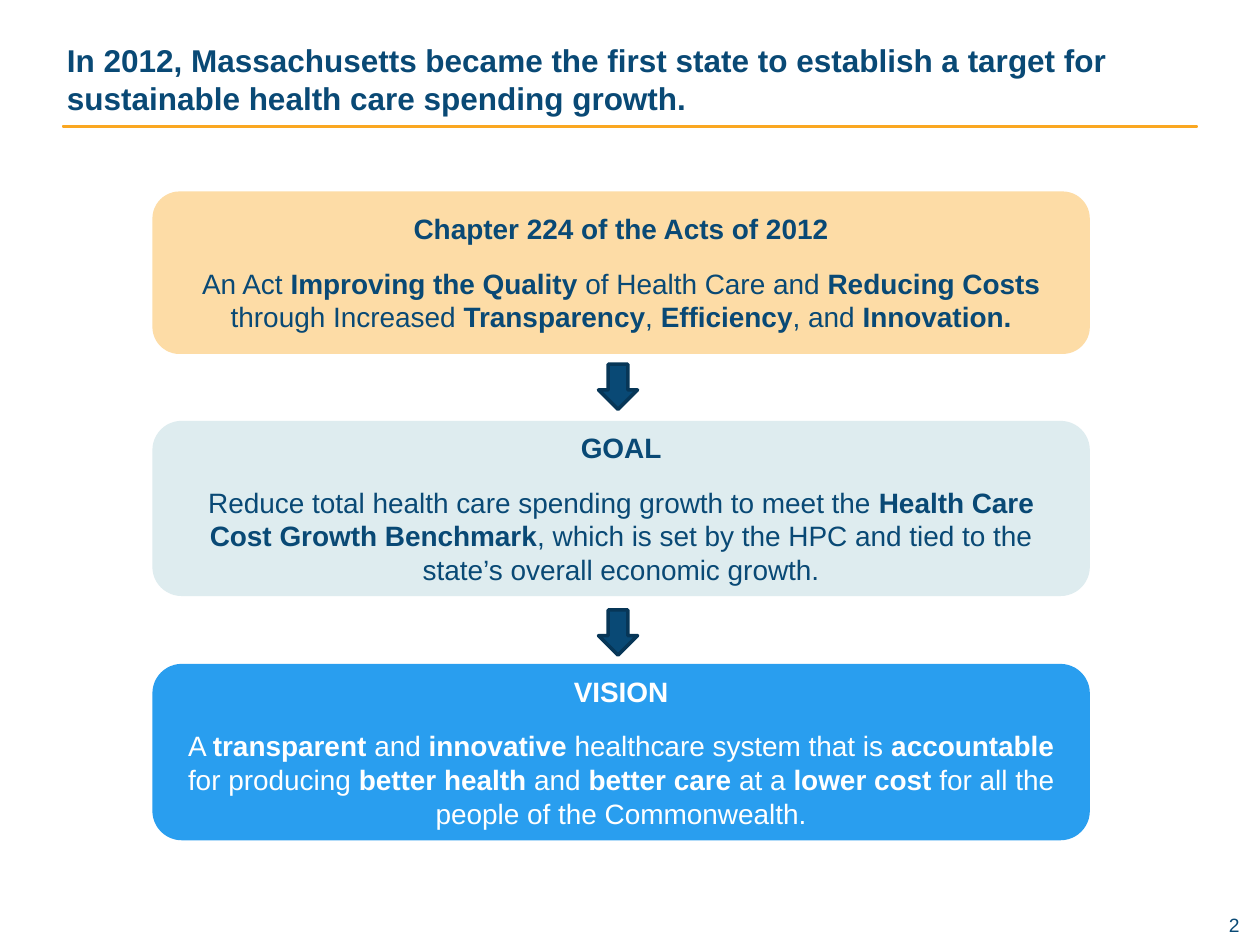
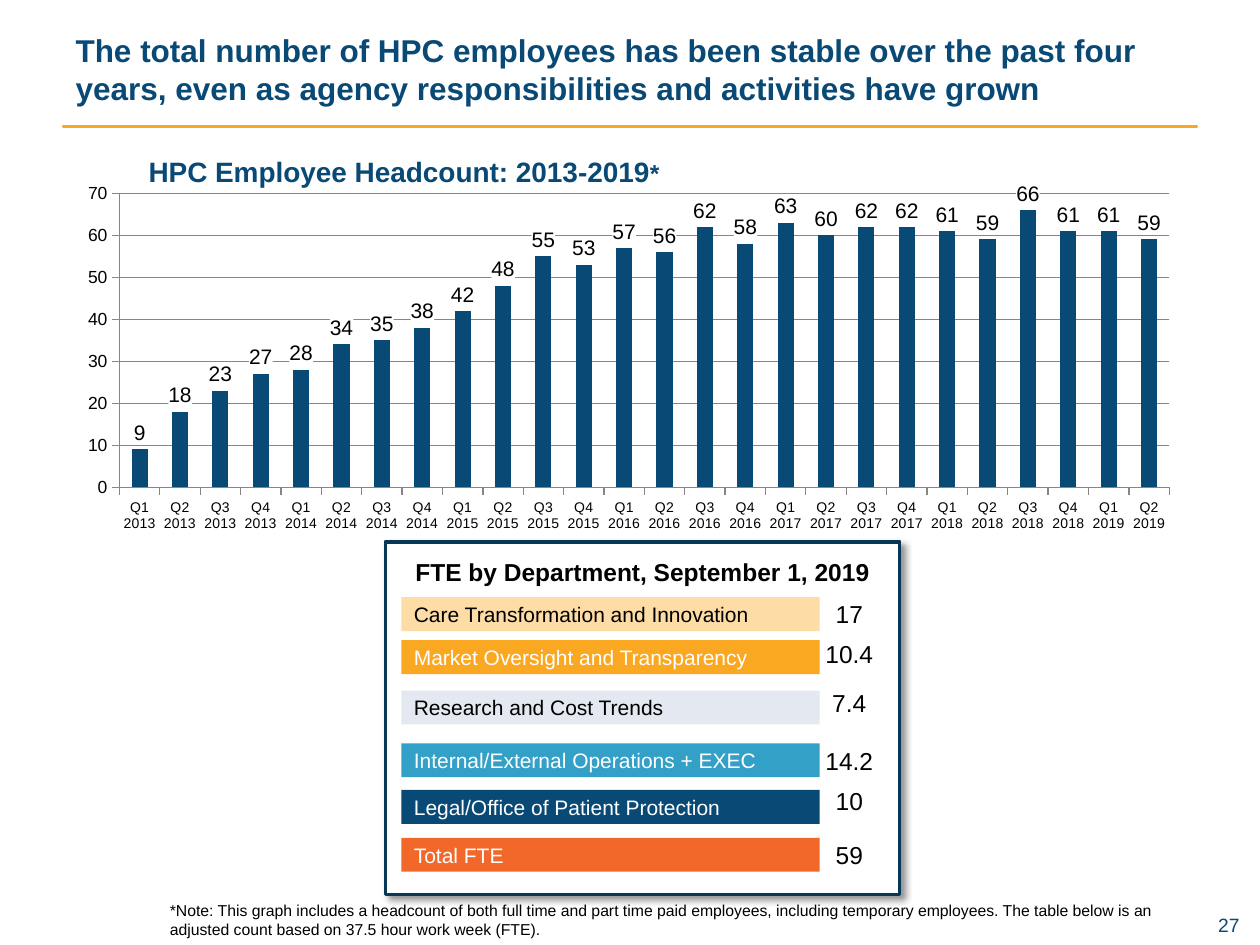
from itertools import islice, product
from typing import NamedTuple

from pptx import Presentation
from pptx import util as u
from pptx.chart import data as cd
from pptx.dml import color
from pptx.enum import chart as ch
from pptx.enum import shapes, text
from pptx.oxml import ns, parse_xml

Pt = u.Pt
FONT = "Arial"
C = {
    "navy": "094975",
    "edge": "073657",
    "amber": "FAA721",
    "sand": "FDDCA6",
    "mist": "DEECEF",
    "sky": "299EEF",
    "teal": "33A0C8",
    "haze": "E3E8F1",
    "orange": "F2682A",
    "grid": "868686",
    "white": "FFFFFF",
    "black": "000000",
}
SHAPE = shapes.MSO_SHAPE
LEFT, CENTER, RIGHT = text.PP_ALIGN.LEFT, text.PP_ALIGN.CENTER, text.PP_ALIGN.RIGHT
MIDDLE, TOP = text.MSO_ANCHOR.MIDDLE, text.MSO_ANCHOR.TOP


class Box(NamedTuple):
    x: float
    y: float
    w: float
    h: float


class Step(NamedTuple):
    y: float
    h: float
    fill: str
    ink: str
    heading: str
    body: str


class Department(NamedTuple):
    y: float
    value_y: float
    fill: str
    ink: str
    name: str
    fte: str


STEPS = [
    Step(109.4, 92.9, "sand", "navy", "Chapter 224 of the Acts of 2012",
         "An Act **Improving the Quality **of Health Care and **Reducing Costs **through "
         "Increased **Transparency**, **Efficiency**, and **Innovation.**"),
    Step(240.5, 100.1, "mist", "navy", "GOAL",
         "Reduce total health care spending growth to meet the **Health Care Cost Growth "
         "Benchmark**, which is set by the HPC and tied to the state’s overall economic growth."),
    Step(379.4, 100.8, "sky", "white", "VISION",
         "A **transparent** and **innovative** healthcare system that is **accountable **for "
         "producing **better health **and **better care **at a **lower cost **for all the "
         "people of the Commonwealth."),
]
ARROW_TOPS = [208.1, 348.5]

DEPARTMENTS = [
    Department(341.3, 341.3, "sand", "black", "Care Transformation and Innovation", "17"),
    Department(365.8, 363.6, "amber", "white", "Market Oversight and Transparency", "10.4"),
    Department(394.6, 391.7, "haze", "black", "Research and Cost Trends", "7.4"),
    Department(424.8, 424.8, "teal", "white", "Internal/External Operations + EXEC", "14.2"),
    Department(451.4, 447.8, "navy", "white", "Legal/Office of Patient Protection", "10"),
    Department(478.8, 478.8, "orange", "white", "Total FTE", "59"),
]
HEADCOUNT = [9, 18, 23, 27, 28, 34, 35, 38, 42, 48, 55, 53, 57,
             56, 62, 58, 63, 60, 62, 62, 61, 59, 66, 61, 61, 59]


def rgb(name: str) -> color.RGBColor:
    return color.RGBColor.from_string(C[name])


def style(font, size: float, ink: str, bold: bool = False) -> None:
    font.name, font.size, font.bold = FONT, Pt(size), bold
    font.color.rgb = rgb(ink)


def place(sp, box: Box) -> None:
    sp.left, sp.top, sp.width, sp.height = map(Pt, box)


def add_shape(s, kind, box: Box, fill: str, line: str = "", weight: float = 1):
    sp = s.shapes.add_shape(kind, *map(Pt, box))
    sp.shadow.inherit = False
    sp.fill.solid()
    sp.fill.fore_color.rgb = rgb(fill)
    if line:
        sp.line.color.rgb = rgb(line)
        sp.line.width = Pt(weight)
    else:
        sp.line.fill.background()
    return sp


def write(sp, content: str, size: float, ink: str, bold: bool = False,
          align=LEFT, anchor=MIDDLE):
    tf = sp.text_frame
    tf.word_wrap = True
    tf.vertical_anchor = anchor
    tf.text = content
    p = tf.paragraphs[0]
    p.alignment = align
    style(p.runs[0].font, size, ink, bold)
    return tf


def add_text(s, box: Box, content: str, size: float, ink: str, bold: bool = False,
             align=LEFT, anchor=TOP):
    return write(s.shapes.add_textbox(*map(Pt, box)), content, size, ink, bold, align, anchor)


def add_slide(prs, title: str, x: float, y: float, number: int):
    s = prs.slides.add_slide(prs.slide_layouts[5])
    add_shape(s, SHAPE.RECTANGLE, Box(36, 72, 648, 0.72), "amber", "amber")
    tf = add_text(s, Box(534.2, 522, 174.2, 13.7), str(number), 11, "navy", align=RIGHT)
    tf.margin_left = tf.margin_right = tf.margin_top = tf.margin_bottom = 0
    place(s.shapes.title, Box(x, y, 648, 54))
    write(s.shapes.title, title, 18, "navy", True).auto_size = text.MSO_AUTO_SIZE.NONE
    return s


def add_step(s, step: Step) -> None:
    sp = add_shape(s, SHAPE.ROUNDED_RECTANGLE, Box(87.1, step.y, 535.7, step.h), step.fill)
    tf = write(sp, step.heading, 16, step.ink, True, CENTER)
    tf.paragraphs[0].space_after = Pt(12)
    p = tf.add_paragraph()
    p.alignment = CENTER
    for i, part in enumerate(step.body.split("**")):
        if part:
            r = p.add_run()
            r.text = part
            style(r.font, 16, step.ink, i % 2 == 1)


def add_shadow(sp) -> None:
    effects = sp._element.spPr.find(ns.qn("a:effectLst"))
    effects.append(parse_xml(
        f'<a:outerShdw {ns.nsdecls("a")} blurRad="{Pt(4)}" dist="{Pt(3)}" dir="2700000" '
        f'algn="tl" rotWithShape="0"><a:srgbClr val="{C["black"]}">'
        '<a:alpha val="40000"/></a:srgbClr></a:outerShdw>'))


def set_plot_area(chart, x: float, y: float, w: float, h: float) -> None:
    area = chart._chartSpace.chart.plotArea
    for old in area.findall(ns.qn("c:layout")):
        area.remove(old)
    sizes = "".join(f'<c:{k} val="{v}"/>' for k, v in zip("xywh", (x, y, w, h)))
    area.insert(0, parse_xml(
        f'<c:layout {ns.nsdecls("c")}><c:manualLayout><c:layoutTarget val="inner"/>'
        f'<c:xMode val="edge"/><c:yMode val="edge"/>{sizes}</c:manualLayout></c:layout>'))


def add_headcount_chart(s, box: Box) -> None:
    quarters = product(range(2013, 2020), range(1, 5))
    cats = [f"Q{q} {year}" for year, q in islice(quarters, len(HEADCOUNT))]
    data = cd.CategoryChartData()
    data.categories = cats
    data.add_series("Series 1", HEADCOUNT)
    chart = s.shapes.add_chart(ch.XL_CHART_TYPE.COLUMN_CLUSTERED, *map(Pt, box), data).chart
    chart.has_title = chart.has_legend = False
    style(chart.font, 18, "black")
    set_plot_area(chart, 0.05, 0.04, 0.93, 0.81)

    for axis, size in ((chart.category_axis, 8), (chart.value_axis, 10)):
        style(axis.tick_labels.font, size, "black")
        axis.major_tick_mark = ch.XL_TICK_MARK.OUTSIDE
        axis.format.line.color.rgb = rgb("grid")
    axis = chart.value_axis
    axis.minimum_scale, axis.maximum_scale, axis.major_unit = 0, 70, 10
    axis.major_gridlines.format.line.color.rgb = rgb("grid")

    plot = chart.plots[0]
    plot.gap_width = 150
    plot.vary_by_categories = False
    fill = plot.series[0].format.fill
    fill.solid()
    fill.fore_color.rgb = rgb("navy")
    labels = plot.series[0].data_labels
    labels.show_value = True
    labels.position = ch.XL_LABEL_POSITION.OUTSIDE_END
    style(labels.font, 12, "black")
    labels._element.find(ns.qn("c:txPr")).addprevious(parse_xml(
        f'<c:spPr {ns.nsdecls("c", "a")}><a:solidFill><a:srgbClr val="{C["white"]}"/>'
        '</a:solidFill></c:spPr>'))


def add_department(s, d: Department) -> None:
    bar = add_shape(s, SHAPE.RECTANGLE, Box(229.4, d.y, 239, 19.4), d.fill)
    write(bar, d.name, 12, d.ink)
    add_text(s, Box(455.1, d.value_y, 60.5, 19.4), d.fte, 14, "black",
             align=CENTER, anchor=MIDDLE)


def build_target_slide(prs) -> None:
    s = add_slide(prs, "In 2012, Massachusetts became the first state to establish a target "
                  "for sustainable health care spending growth.", 31, 18, 2)
    for step in STEPS:
        add_step(s, step)
    for y in ARROW_TOPS:
        add_shape(s, SHAPE.DOWN_ARROW, Box(342, y, 22.3, 25.9), "navy", "edge", 2)


def build_headcount_slide(prs) -> None:
    s = add_slide(prs, "The total number of HPC employees has been stable over the past four "
                  "years, even as agency responsibilities and activities have grown",
                  36, 12.2, 27)
    add_headcount_chart(s, Box(36, 102.2, 645.1, 207.4))
    tf = add_text(s, Box(77.8, 85, 330, 26.6), "HPC Employee Headcount: 2013-2019",
                  16, "navy", True)
    r = tf.paragraphs[0].add_run()
    r.text = "*"
    style(r.font, 14, "navy", True)

    panel = add_shape(s, SHAPE.RECTANGLE, Box(220.3, 309.6, 293.8, 201.6), "white", "edge", 2)
    add_shadow(panel)
    tf = write(panel, "FTE by Department, September 1, 2019", 14, "black", True, CENTER, TOP)
    tf.margin_top = Pt(8.6)
    for d in DEPARTMENTS:
        add_department(s, d)
    add_text(s, Box(90, 511.2, 576, 28.8),
             "*Note: This graph includes a headcount of both full time and part time paid "
             "employees, including temporary employees. The table below is an adjusted count "
             "based on 37.5 hour work week (FTE).", 9, "black")


def main() -> None:
    prs = Presentation()
    prs.slide_width, prs.slide_height = Pt(720), Pt(540)
    build_target_slide(prs)
    build_headcount_slide(prs)
    prs.save("out.pptx")


if __name__ == "__main__":
    main()
